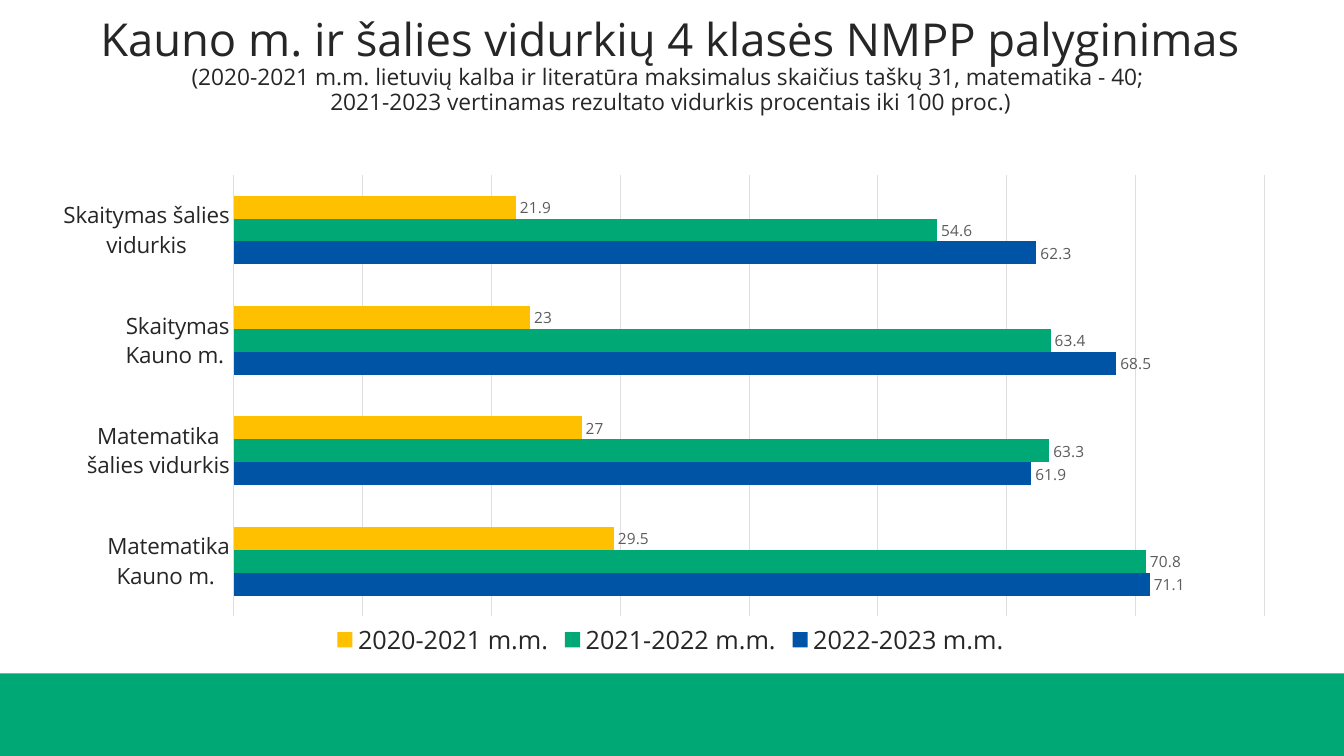
from lxml import etree
from pptx import Presentation
from pptx.chart.data import CategoryChartData
from pptx.dml.color import RGBColor
from pptx.enum.chart import XL_CHART_TYPE, XL_LABEL_POSITION, XL_LEGEND_POSITION, XL_TICK_LABEL_POSITION, XL_TICK_MARK
from pptx.enum.shapes import MSO_SHAPE
from pptx.enum.text import MSO_ANCHOR, PP_ALIGN
from pptx.oxml.ns import qn
from pptx.util import Inches, Pt

BAR_CLUSTERED = XL_CHART_TYPE.BAR_CLUSTERED
OUTSIDE_END = XL_LABEL_POSITION.OUTSIDE_END
LEGEND_BOTTOM = XL_LEGEND_POSITION.BOTTOM
NO_LABELS = XL_TICK_LABEL_POSITION.NONE
NO_TICKS = XL_TICK_MARK.NONE
RECTANGLE = MSO_SHAPE.RECTANGLE
BOTTOM = MSO_ANCHOR.BOTTOM
CENTER = PP_ALIGN.CENTER

FONT = "Open Sans"
COLORS = {
    "text": "262626",
    "label": "5C5C5C",
    "grid": "DEDEDE",
    "blue": "0054A5",
    "green": "00A875",
    "yellow": "FFC000",
}
TITLE = "Kauno m. ir šalies vidurkių 4 klasės NMPP palyginimas"
SUBTITLE = (
    "(2020-2021 m.m. lietuvių kalba ir literatūra maksimalus skaičius taškų 31, matematika - 40; ",
    "2021-2023 vertinamas rezultato vidurkis procentais iki 100 proc.)",
)
CATEGORIES = (
    "Matematika Kauno m. ",
    "Matematika šalies vidurkis",
    "Skaitymas Kauno m. ",
    "Skaitymas šalies vidurkis",
)
SERIES = (
    ("2022-2023 m.m.", (71.1, 61.9, 68.5, 62.3), "blue"),
    ("2021-2022 m.m.", (70.8, 63.3, 63.4, 54.6), "green"),
    ("2020-2021 m.m.", (29.5, 27, 23, 21.9), "yellow"),
)
PLOT_LAYOUT = {"x": 0.142, "y": 0.031, "w": 0.845, "h": 0.878}


def color(name):
    """Return the named colour."""
    return RGBColor.from_string(COLORS[name])


def style_font(font, size, color_name="text"):
    """Set typeface, size and colour of a font."""
    font.name = FONT
    font.size = Pt(size)
    font.color.rgb = color(color_name)


def style_line(line):
    """Give a chart line the thin grid style."""
    line.color.rgb = color("grid")
    line.width = Pt(0.75)


def add_band(slide, left, top, width, height):
    """Draw the green band."""
    band = slide.shapes.add_shape(RECTANGLE, left, top, width, height)
    band.shadow.inherit = False
    band.fill.solid()
    band.fill.fore_color.rgb = color("green")
    band.line.fill.background()


def add_title(slide, left, top, width, height):
    """Write the title with its two smaller lines below."""
    frame = slide.shapes.add_textbox(left, top, width, height).text_frame
    frame.word_wrap = True
    frame.vertical_anchor = BOTTOM
    paragraph = frame.paragraphs[0]
    paragraph.text = "\v".join((TITLE, *SUBTITLE))
    paragraph.alignment = CENTER
    paragraph.line_spacing = 0.9
    style_font(paragraph.font, 16.2)
    paragraph.runs[0].font.size = Pt(32.4)


def set_plot_layout(chart):
    """Fix the inner plot area as fractions of the chart."""
    plot_area = chart.plots[0]._element.getparent()
    for old_layout in plot_area.findall(qn("c:layout")):
        plot_area.remove(old_layout)
    layout = etree.Element(qn("c:layout"))
    plot_area.insert(0, layout)
    manual = etree.SubElement(layout, qn("c:manualLayout"))
    settings = {"layoutTarget": "inner", "xMode": "edge", "yMode": "edge", **PLOT_LAYOUT}
    for tag, value in settings.items():
        etree.SubElement(manual, qn(f"c:{tag}")).set("val", str(value))


def style_axes(chart):
    """Style the category axis and the grid of the unlabelled value axis."""
    category_axis = chart.category_axis
    category_axis.major_tick_mark = NO_TICKS
    style_font(category_axis.tick_labels.font, 16)
    style_line(category_axis.format.line)
    value_axis = chart.value_axis
    value_axis.minimum_scale = 0
    value_axis.maximum_scale = 80
    value_axis.major_unit = 10
    value_axis.major_tick_mark = NO_TICKS
    value_axis.tick_label_position = NO_LABELS
    value_axis.format.line.fill.background()
    style_line(value_axis.major_gridlines.format.line)


def add_results_chart(slide, left, top, width, height):
    """Draw the clustered bars with labels and legend."""
    data = CategoryChartData()
    data.categories = CATEGORIES
    for name, values, _ in SERIES:
        data.add_series(name, values)
    chart = slide.shapes.add_chart(BAR_CLUSTERED, left, top, width, height, data).chart
    chart.has_title = False
    style_font(chart.font, 10)
    style_axes(chart)
    plot = chart.plots[0]
    plot.gap_width = 182
    plot.vary_by_categories = False
    for series, (_, _, color_name) in zip(plot.series, SERIES):
        series.format.fill.solid()
        series.format.fill.fore_color.rgb = color(color_name)
        labels = series.data_labels
        labels.show_value = True
        labels.position = OUTSIDE_END
        style_font(labels.font, 11, "label")
    chart.has_legend = True
    chart.legend.position = LEGEND_BOTTOM
    chart.legend.include_in_layout = False
    style_font(chart.legend.font, 18)
    set_plot_layout(chart)


def main():
    """Build and save the slide."""
    presentation = Presentation()
    presentation.slide_width = Inches(13.33)
    presentation.slide_height = Inches(7.5)
    slide = presentation.slides.add_slide(presentation.slide_layouts[6])
    add_band(slide, 0, Inches(6.68), presentation.slide_width, Inches(0.82))
    add_title(slide, Inches(0.6), Inches(0.3), Inches(12.1), Inches(0.89))
    add_results_chart(slide, Inches(0.6), Inches(1.58), Inches(12.1), Inches(4.99))
    presentation.save("out.pptx")


if __name__ == "__main__":
    main()
